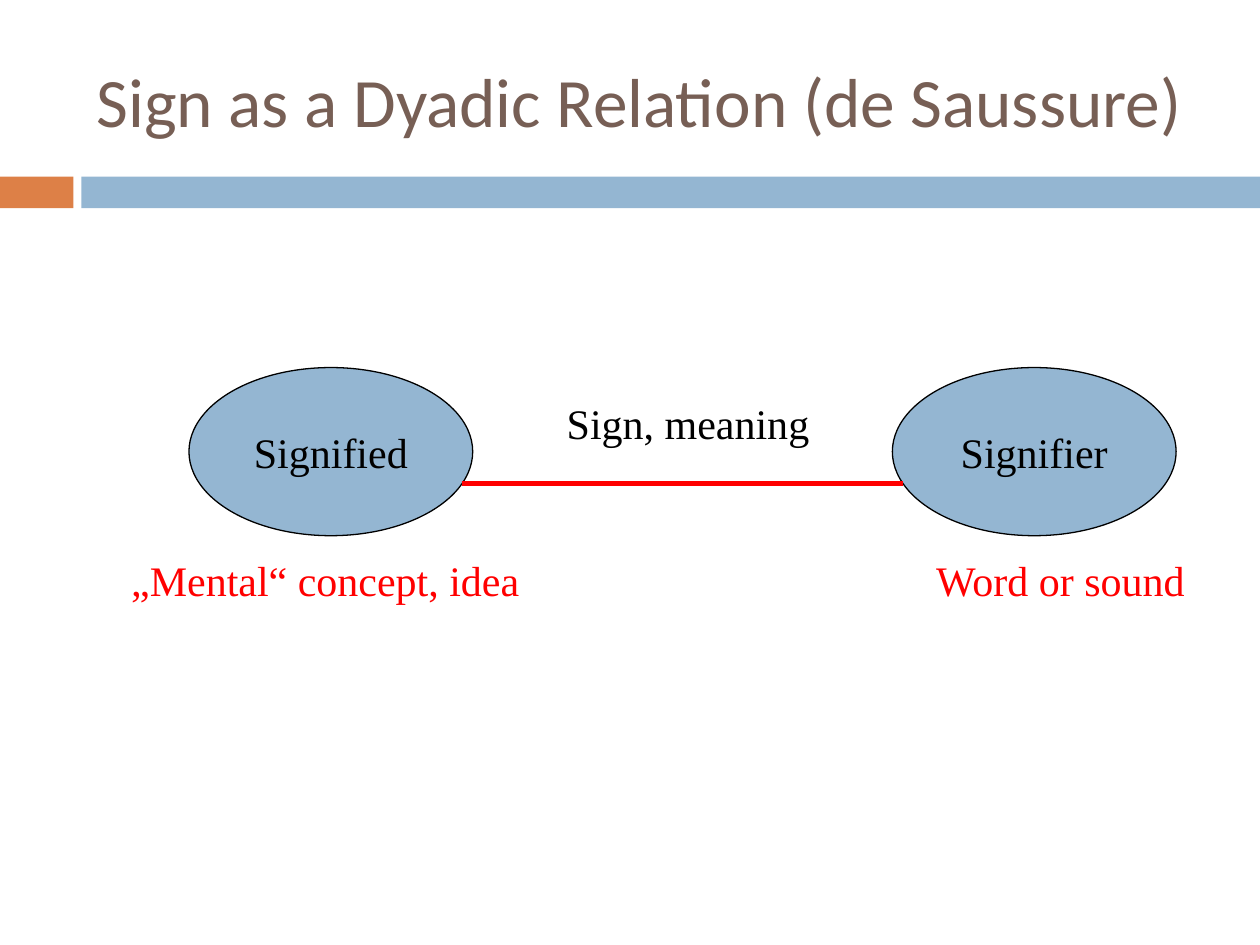
from lxml.etree import SubElement
from pptx import Presentation
from pptx.dml.color import RGBColor
from pptx.enum.shapes import MSO_CONNECTOR, MSO_SHAPE
from pptx.enum.text import MSO_ANCHOR, MSO_AUTO_SIZE, PP_ALIGN
from pptx.oxml.ns import qn
from pptx.util import Cm, Pt

COLORS = {
    "title": "775F55",
    "accent": "DD8047",
    "blue": "94B6D2",
    "red": "FF0000",
    "black": "000000",
}


def color(name):
    return RGBColor.from_string(COLORS[name])


def write_text(shape, text, font="Times New Roman", size=24, fill="black",
               align=PP_ALIGN.CENTER, wrap=True):
    frame = shape.text_frame
    frame.auto_size = MSO_AUTO_SIZE.NONE
    frame.word_wrap = wrap
    frame.vertical_anchor = MSO_ANCHOR.MIDDLE
    paragraph = frame.paragraphs[0]
    paragraph.alignment = align
    run = paragraph.add_run()
    run.text = text
    run.font.name = font
    run.font.size = Pt(size)
    run.font.color.rgb = color(fill)


class DiagramSlide:
    def __init__(self, presentation):
        self.slide = presentation.slides.add_slide(presentation.slide_layouts[5])
        self.diagram = None

    def start_diagram(self):
        self.diagram = self.slide.shapes.add_group_shape().shapes

    def title(self, text, left, top, width, height):
        shape = self.slide.shapes.title
        shape.left, shape.top = Cm(left), Cm(top)
        shape.width, shape.height = Cm(width), Cm(height)
        write_text(shape, text, font="Calibri", size=39.6, fill="title",
                   align=PP_ALIGN.LEFT)

    def filled(self, shapes, kind, fill, left, top, width, height):
        shape = shapes.add_shape(kind, Cm(left), Cm(top), Cm(width), Cm(height))
        shape.shadow.inherit = False
        shape.fill.solid()
        shape.fill.fore_color.rgb = color(fill)
        return shape

    def bar(self, fill, left, width):
        shape = self.filled(self.slide.shapes, MSO_SHAPE.RECTANGLE, fill,
                            left, 3.56, width, 0.64)
        shape.line.fill.background()

    def node(self, text, left):
        shape = self.filled(self.diagram, MSO_SHAPE.OVAL, "blue",
                            left, 7.41, 5.72, 3.39)
        shape.line.color.rgb = color("black")
        shape.line.width = Pt(0.75)
        write_text(shape, text, wrap=False)

    def link(self, start, end, y):
        connector = self.diagram.add_connector(
            MSO_CONNECTOR.STRAIGHT, Cm(start), Cm(y), Cm(end), Cm(y))
        connector.line.color.rgb = color("red")
        connector.line.width = Pt(3)
        SubElement(connector.element.find(qn("p:spPr")), qn("a:effectLst"))

    def label(self, text, left, top, width, fill):
        box = self.diagram.add_textbox(Cm(left), Cm(top), Cm(width), Cm(1.27))
        write_text(box, text, fill=fill)


def main():
    presentation = Presentation()
    presentation.slide_width, presentation.slide_height = Cm(25.4), Cm(19.05)
    page = DiagramSlide(presentation)

    # Heading and divider
    page.bar("accent", 0, 1.48)
    page.bar("blue", 1.64, 23.76)
    page.title("Sign as a Dyadic Relation (de Saussure)", 1.69, 0.64, 22.66, 2.75)

    # Two sides of the sign and the relation between them
    page.start_diagram()
    for text, left in (("Signified", 3.81), ("Signifier", 17.99)):
        page.node(text, left)
    page.link(9.31, 18.2, 9.74)

    # Explanations
    page.label("„Mental“ concept, idea", 0.42, 11.06, 12.28, "red")
    page.label("Word or sound", 17.99, 11.06, 6.77, "red")
    page.label("Sign, meaning", 10.8, 7.88, 6.14, "black")

    presentation.save("out.pptx")


if __name__ == "__main__":
    main()
